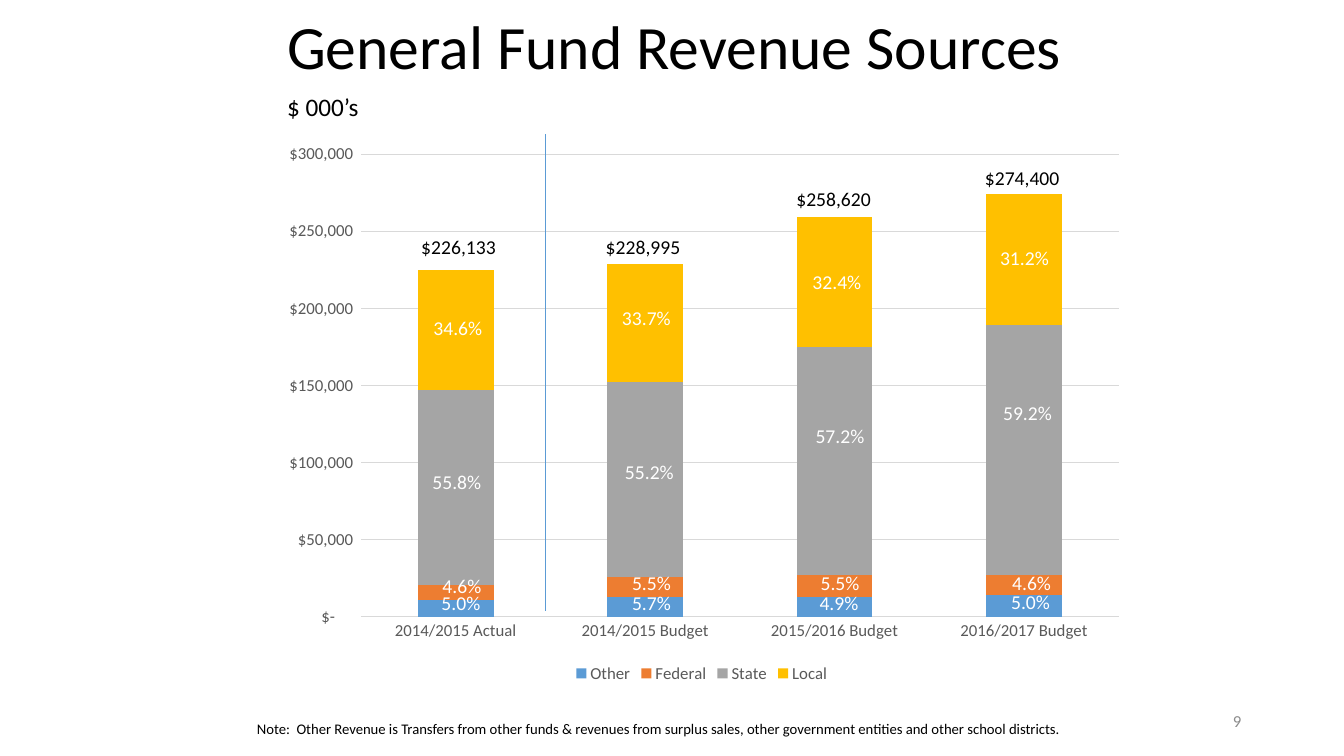
from pptx import Presentation
from pptx import util as u
from pptx.chart.data import CategoryChartData
from pptx.dml.color import RGBColor
from pptx.enum import chart as ch, shapes, text
from pptx.oxml import parse_xml
from pptx.oxml.ns import nsdecls, qn
from lxml import etree

BLACK = RGBColor(0x00, 0x00, 0x00)
WHITE = RGBColor(0xFF, 0xFF, 0xFF)
PAGE_GRAY = RGBColor(0x8C, 0x8C, 0x8C)
AXIS_GRAY = RGBColor(0x59, 0x59, 0x59)
GRID_GRAY = RGBColor(0xD9, 0xD9, 0xD9)
BLUE = RGBColor(0x5B, 0x9B, 0xD5)
ORANGE = RGBColor(0xED, 0x7D, 0x31)
GRAY = RGBColor(0xA5, 0xA5, 0xA5)
GOLD = RGBColor(0xFF, 0xC0, 0x00)

YEARS = ["2014/2015 Actual", "2014/2015 Budget", "2015/2016 Budget", "2016/2017 Budget"]
SOURCES = [
    ("Other", BLUE, [11000, 13000, 13000, 14000]),
    ("Federal", ORANGE, [10000, 13000, 14000, 13000]),
    ("State", GRAY, [126000, 126000, 148000, 162000]),
    ("Local", GOLD, [78000, 77000, 84000, 85000]),
]
DOLLARS = r'_("$"* #,##0_);_("$"* \(#,##0\);_("$"* "-"??_);_(@_)'
PLOT_BOX = {"x": 0.107, "y": 0.038, "w": 0.874, "h": 0.835}  # shares of the chart frame

# (label, left, top), one row per kind of figure, one entry per year
TOTALS = [("$226,133", 4.08, 2.25), ("$228,995", 5.91, 2.25),
          ("$258,620", 7.8, 1.77), ("$274,400", 9.67, 1.56)]
SHARES = [
    [("34.6%", 4.2, 3.05), ("33.7%", 6.07, 2.95), ("32.4%", 7.96, 2.59), ("31.2%", 9.82, 2.36)],
    [("55.8%", 4.19, 4.58), ("55.2%", 6.1, 4.48), ("57.2%", 7.99, 4.12), ("59.2%", 9.85, 3.89)],
    [("4.6%", 4.29, 5.61), ("5.5%", 6.17, 5.58), ("5.5%", 8.04, 5.58), ("4.6%", 9.94, 5.58)],
    [("5.0%", 4.28, 5.78), ("5.7%", 6.17, 5.78), ("4.9%", 8.03, 5.78), ("5.0%", 9.93, 5.77)],
]


class SlideBuilder:
    font = "Calibri"

    def __init__(self, slide):
        self.s = slide

    def style(self, font, size, color):
        font.name, font.size = self.font, u.Pt(size)
        font.color.rgb = color

    def text(self, words, box, size, color=BLACK, wrap=True, middle=False,
             align=text.PP_ALIGN.LEFT, spacing=None, after=None):
        tf = self.s.shapes.add_textbox(*map(u.Inches, box)).text_frame
        tf.word_wrap = wrap
        tf.vertical_anchor = text.MSO_ANCHOR.MIDDLE if middle else text.MSO_ANCHOR.TOP
        p = tf.paragraphs[0]
        p.alignment = align
        p.line_spacing = spacing
        p.space_after = after
        r = p.add_run()
        r.text = words
        self.style(r.font, size, color)

    def chart_label(self, words, left, top, width, height, color):
        self.text(words, (left, top, width, height), 14, color, spacing=1.15, after=u.Pt(10))

    def line(self, x1, y1, x2, y2, color, weight):
        c = self.s.shapes.add_connector(shapes.MSO_CONNECTOR.STRAIGHT,
                                        *map(u.Inches, (x1, y1, x2, y2)))
        c.line.color.rgb = color
        c.line.width = u.Pt(weight)
        etree.SubElement(c._element.spPr, qn("a:effectLst"))

    def stacked_columns(self, box):
        data = CategoryChartData()
        data.categories = YEARS
        for name, _, values in SOURCES:
            data.add_series(name, values)
        chart = self.s.shapes.add_chart(ch.XL_CHART_TYPE.COLUMN_STACKED,
                                        *map(u.Inches, box), data).chart
        chart.has_title = False
        self.style(chart.font, 10, BLACK)
        plot = chart.plots[0]
        plot.gap_width, plot.overlap = 150, 100
        plot.vary_by_categories = False
        for series, (_, color, _) in zip(plot.series, SOURCES):
            series.format.fill.solid()
            series.format.fill.fore_color.rgb = color

        years, amounts = chart.category_axis, chart.value_axis
        for axis in (years, amounts):
            axis.major_tick_mark = axis.minor_tick_mark = ch.XL_TICK_MARK.NONE
            self.style(axis.tick_labels.font, 12, AXIS_GRAY)
        amounts.minimum_scale, amounts.maximum_scale = 0, 300000
        amounts.major_unit = 50000
        amounts.tick_labels.number_format = DOLLARS
        amounts.tick_labels.number_format_is_linked = False
        amounts.format.line.fill.background()
        for line in (years.format.line, amounts.major_gridlines.format.line):
            line.color.rgb = GRID_GRAY
            line.width = u.Pt(0.75)

        chart.has_legend = True
        chart.legend.position = ch.XL_LEGEND_POSITION.BOTTOM
        chart.legend.include_in_layout = False
        self.style(chart.legend.font, 12, AXIS_GRAY)
        self.fix_plot_area(chart)

    def fix_plot_area(self, chart):
        area = chart._chartSpace.chart.plotArea
        for old in area.findall(qn("c:layout")):
            area.remove(old)
        modes = '<c:xMode val="edge"/><c:yMode val="edge"/>'
        sizes = "".join(f'<c:{k} val="{v}"/>' for k, v in PLOT_BOX.items())
        area.insert(0, parse_xml(
            f'<c:layout {nsdecls("c")}><c:manualLayout><c:layoutTarget val="inner"/>'
            f'{modes}{sizes}</c:manualLayout></c:layout>'))


def main():
    prs = Presentation()
    prs.slide_width, prs.slide_height = u.Inches(13.33), u.Inches(7.5)
    b = SlideBuilder(prs.slides.add_slide(prs.slide_layouts[6]))

    b.text("General Fund Revenue Sources", (2.75, 0.1, 8.5, 0.78), 44, middle=True, spacing=0.9)
    b.text("9", (9.41, 6.95, 3, 0.4), 12, PAGE_GRAY, middle=True, align=text.PP_ALIGN.RIGHT)
    b.text("$ 000’s", (2.75, 0.86, 0.92, 0.4), 18, wrap=False)
    b.text("Note:  Other Revenue is Transfers from other funds & revenues from surplus sales, "
           "other government entities and other school districts.",
           (2.45, 7.09, 8.33, 0.28), 10.5, wrap=False)

    b.stacked_columns((2.66, 1.32, 8.6, 5.5))
    for total in TOTALS:
        b.chart_label(*total, 1, 0.26, BLACK)
    b.line(5.41, 1.33, 5.41, 6.06, BLUE, 0.5)
    for row in SHARES:
        for share in row:
            b.chart_label(*share, 0.79, 0.34, WHITE)

    prs.save("out.pptx")


if __name__ == "__main__":
    main()
